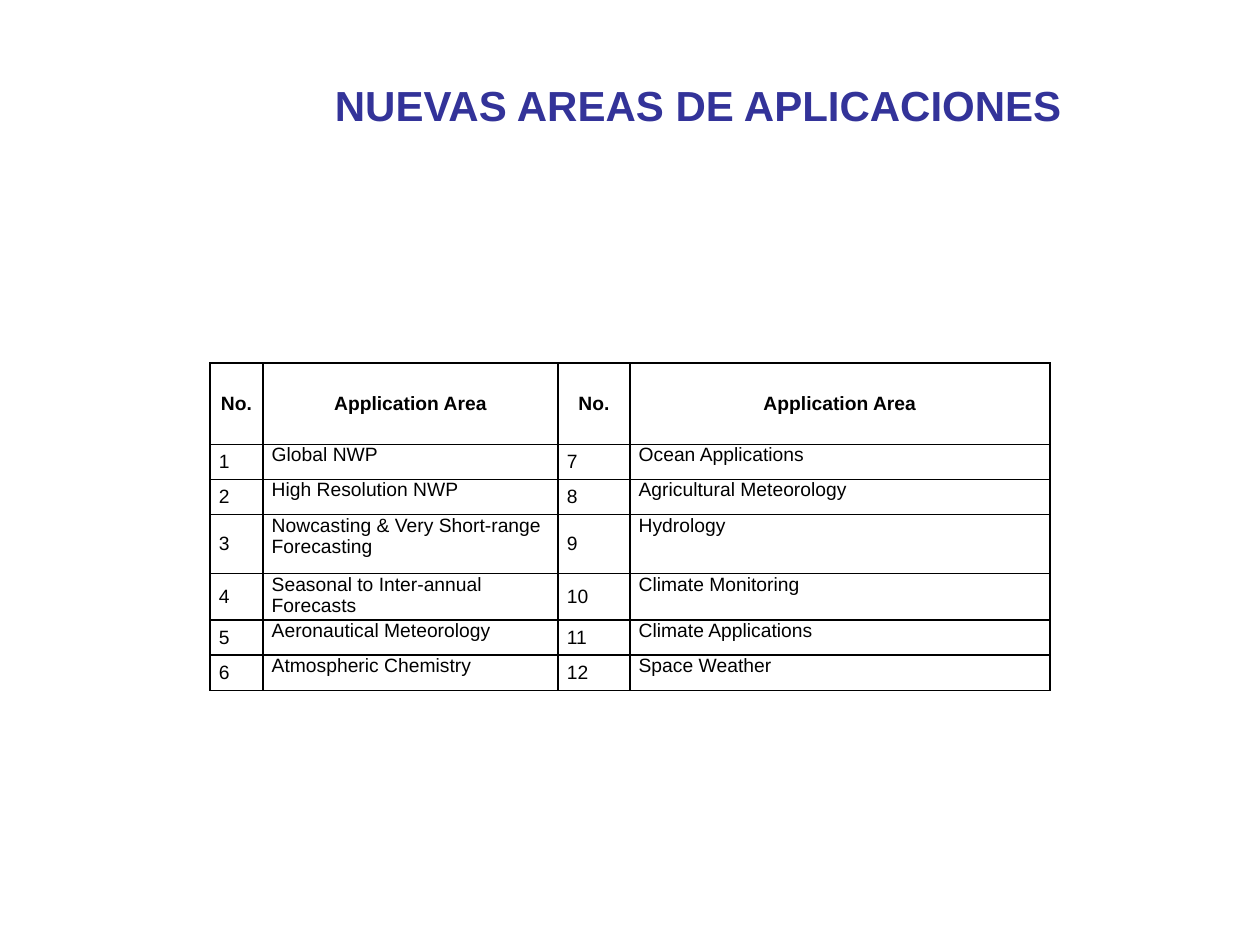
from dataclasses import dataclass

from lxml import etree
from pptx import Presentation
from pptx.dml.color import RGBColor
from pptx.enum.text import MSO_ANCHOR, MSO_AUTO_SIZE, PP_ALIGN
from pptx.oxml.ns import qn
from pptx.util import Inches, Pt

LEFT, CENTER, JUST = PP_ALIGN.LEFT, PP_ALIGN.CENTER, PP_ALIGN.JUSTIFY
TOP, MIDDLE = MSO_ANCHOR.TOP, MSO_ANCHOR.MIDDLE
GROW = MSO_AUTO_SIZE.SHAPE_TO_FIT_TEXT
WIDE, HIGH = 10, 7.5


@dataclass(frozen=True)
class Theme:
    font: str = "Arial"
    title: str = "333399"
    ink: str = "000000"
    paper: str = "FFFFFF"
    head: int = 24
    body: int = 11
    rule: int = 1
    pad: float = 0.07


THEME = Theme()
COLS = [0.42, 2.34, 0.57, 3.33]
ROWS = [0.65, 0.28, 0.28, 0.47, 0.37, 0.28, 0.28]
WRAP = 30  # longer names take two lines
HEADS = ["No.", "Application Area"]
AREAS = [
    "Global NWP", "High Resolution NWP",
    "Nowcasting & Very Short-range Forecasting",
    "Seasonal to Inter-annual Forecasts",
    "Aeronautical Meteorology", "Atmospheric Chemistry",
    "Ocean Applications", "Agricultural Meteorology", "Hydrology",
    "Climate Monitoring", "Climate Applications", "Space Weather",
]


def write(frame, text, size=THEME.body, color=THEME.ink, bold=False, align=LEFT):
    para = frame.paragraphs[0]
    para.alignment = align
    run = para.add_run()
    run.text = text
    font = run.font
    font.name, font.size, font.bold = THEME.font, Pt(size), bold
    font.color.rgb = RGBColor.from_string(color)


def border(cell):
    props = cell._tc.get_or_add_tcPr()
    for spot, side in enumerate(("lnL", "lnR", "lnT", "lnB")):
        line = etree.Element(qn(f"a:{side}"), w=str(Pt(THEME.rule)))
        fill = etree.SubElement(line, qn("a:solidFill"))
        etree.SubElement(fill, qn("a:srgbClr"), val=THEME.ink)
        props.insert(spot, line)


def place(box):
    x, y, w, h = box
    return [Inches(n) for n in (x * WIDE, y * HIGH, w * WIDE, h * HIGH)]


def add_title(slide, box, text):
    frame = slide.shapes.add_textbox(*place(box)).text_frame
    frame.word_wrap = False
    frame.auto_size = GROW
    write(frame, text, size=THEME.head, color=THEME.title, bold=True)


def add_areas(slide, box, names):
    # Two halves of the numbered list stand side by side
    half = len(names) // 2
    data = [HEADS * 2]
    for i in range(half):
        data.append([str(i + 1), names[i], str(i + 1 + half), names[i + half]])

    left, top, width, height = place(box)
    table = slide.shapes.add_table(
        len(ROWS), len(COLS), left, top, width, height).table
    for col, part in zip(table.columns, COLS):
        col.width = int(width * part / sum(COLS))
    for row, part in zip(table.rows, ROWS):
        row.height = int(height * part / sum(ROWS))

    for r, texts in enumerate(data):
        for c, text in enumerate(texts):
            cell = table.cell(r, c)
            head = r == 0
            cell.fill.solid()
            cell.fill.fore_color.rgb = RGBColor.from_string(THEME.paper)
            cell.margin_left = cell.margin_right = Inches(THEME.pad)
            cell.margin_top = cell.margin_bottom = 0
            cell.vertical_anchor = MIDDLE if head or c % 2 == 0 else TOP
            align = CENTER if head else LEFT if len(text) > WRAP else JUST
            write(cell.text_frame, text, bold=head, align=align)
            border(cell)


def main():
    deck = Presentation()
    deck.slide_width, deck.slide_height = Inches(WIDE), Inches(HIGH)
    slide = deck.slides.add_slide(deck.slide_layouts[6])
    # Heading
    add_title(slide, (0.256, 0.58 / HIGH, 0.603, 0.5 / HIGH),
              "NUEVAS AREAS DE APLICACIONES")
    # Table of application areas
    add_areas(slide, (1 / 6, 2.88 / HIGH, 2 / 3, 2.6 / HIGH), AREAS)
    deck.save("out.pptx")


if __name__ == "__main__":
    main()
